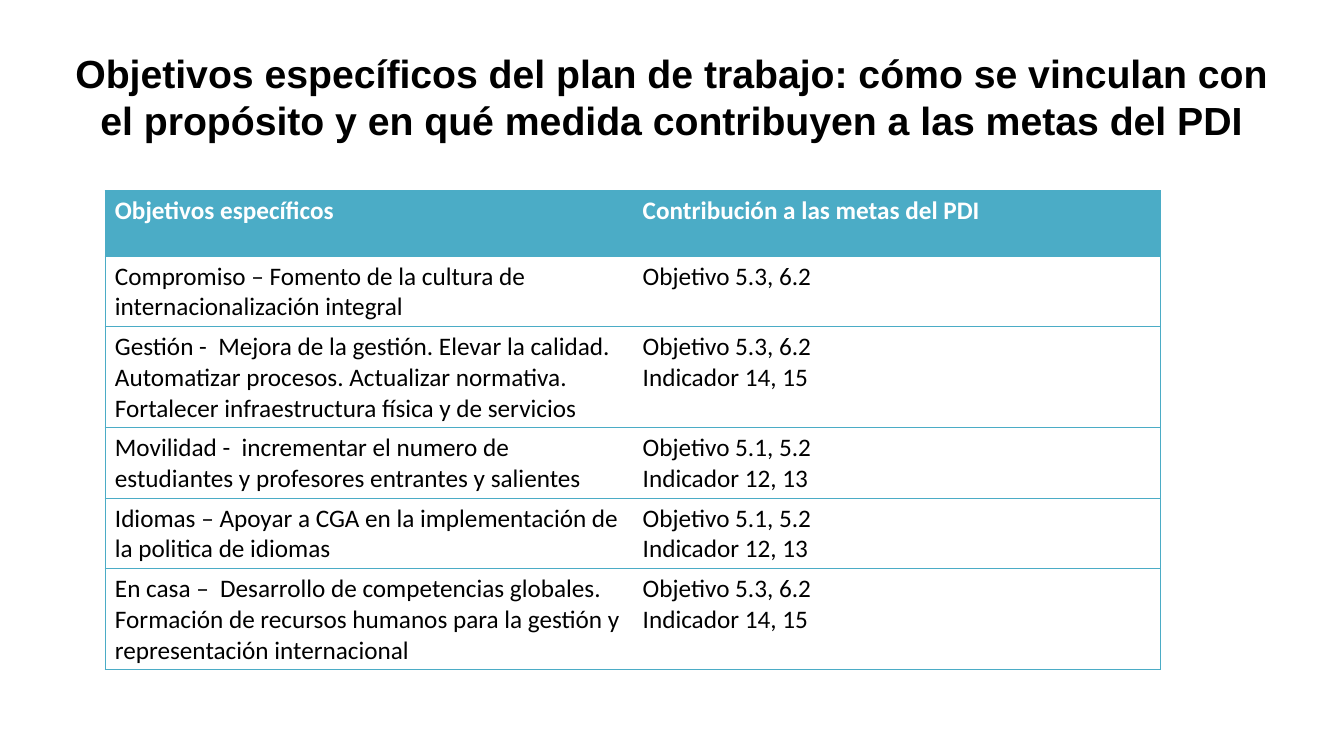
from lxml import etree
from pptx import Presentation
from pptx.dml.color import RGBColor
from pptx.enum import text
from pptx.oxml import ns
from pptx.util import Inches, Pt

HUES = {"teal": "4BACC6", "white": "FFFFFF", "black": "000000"}
ROWS = [
    ("Objetivos específicos", "Contribución a las metas del PDI"),
    ("Compromiso – Fomento de la cultura de internacionalización integral",
     "Objetivo 5.3, 6.2"),
    ("Gestión -  Mejora de la gestión. Elevar la calidad. Automatizar procesos. "
     "Actualizar normativa. Fortalecer infraestructura física y de servicios",
     "Objetivo 5.3, 6.2\nIndicador 14, 15"),
    ("Movilidad -  incrementar el numero de estudiantes y profesores entrantes y salientes",
     "Objetivo 5.1, 5.2\nIndicador 12, 13"),
    ("Idiomas – Apoyar a CGA en la implementación de la politica de idiomas",
     "Objetivo 5.1, 5.2\nIndicador 12, 13"),
    ("En casa –  Desarrollo de competencias globales.\n"
     "Formación de recursos humanos para la gestión y representación internacional",
     "Objetivo 5.3, 6.2\nIndicador 14, 15"),
]


def style(frame, face, size, hue, bold):
    for para in frame.paragraphs:
        for run in para.runs:
            font = run.font
            font.name, font.size, font.bold = face, Pt(size), bold
            font.color.rgb = RGBColor.from_string(HUES[hue])


def border(cell, sides):
    """Draw teal lines on the given sides and clear the others."""
    props = cell._tc.get_or_add_tcPr()
    for spot, side in enumerate("LRTB"):
        line = etree.Element(ns.qn("a:ln" + side), w=str(Pt(0.5)))
        if side in sides:
            fill = etree.SubElement(line, ns.qn("a:solidFill"))
            etree.SubElement(fill, ns.qn("a:srgbClr"), val=HUES["teal"])
        else:
            etree.SubElement(line, ns.qn("a:noFill"))
        props.insert(spot, line)


deck = Presentation()
deck.slide_width, deck.slide_height = Inches(13.33), Inches(7.5)
slide = deck.slides.add_slide(deck.slide_layouts[6])

# Title
title = slide.shapes.add_textbox(Inches(0.55), Inches(0.44), Inches(12.22), Inches(1.04))
frame = title.text_frame
frame.word_wrap = True
frame.auto_size = text.MSO_AUTO_SIZE.SHAPE_TO_FIT_TEXT
frame.text = ("Objetivos específicos del plan de trabajo: cómo se vinculan con "
              "el propósito y en qué medida contribuyen a las metas del PDI")
frame.paragraphs[0].alignment = text.PP_ALIGN.CENTER
style(frame, "Arial", 28, "black", True)

# Table of goals; rows grow with their text
grid = slide.shapes.add_table(len(ROWS), 2, Inches(1.04), Inches(1.89),
                              Inches(10.47), Inches(0.65 * len(ROWS))).table
grid.horz_banding = False
for r, row in enumerate(ROWS):
    head = r == 0
    for c, words in enumerate(row):
        cell = grid.cell(r, c)
        cell.text_frame.text = words
        style(cell.text_frame, "Calibri", 18, "white" if head else "black", head)
        cell.fill.solid()
        cell.fill.fore_color.rgb = RGBColor.from_string(HUES["teal" if head else "white"])
        border(cell, "TB" + "LR"[c])

deck.save("out.pptx")
